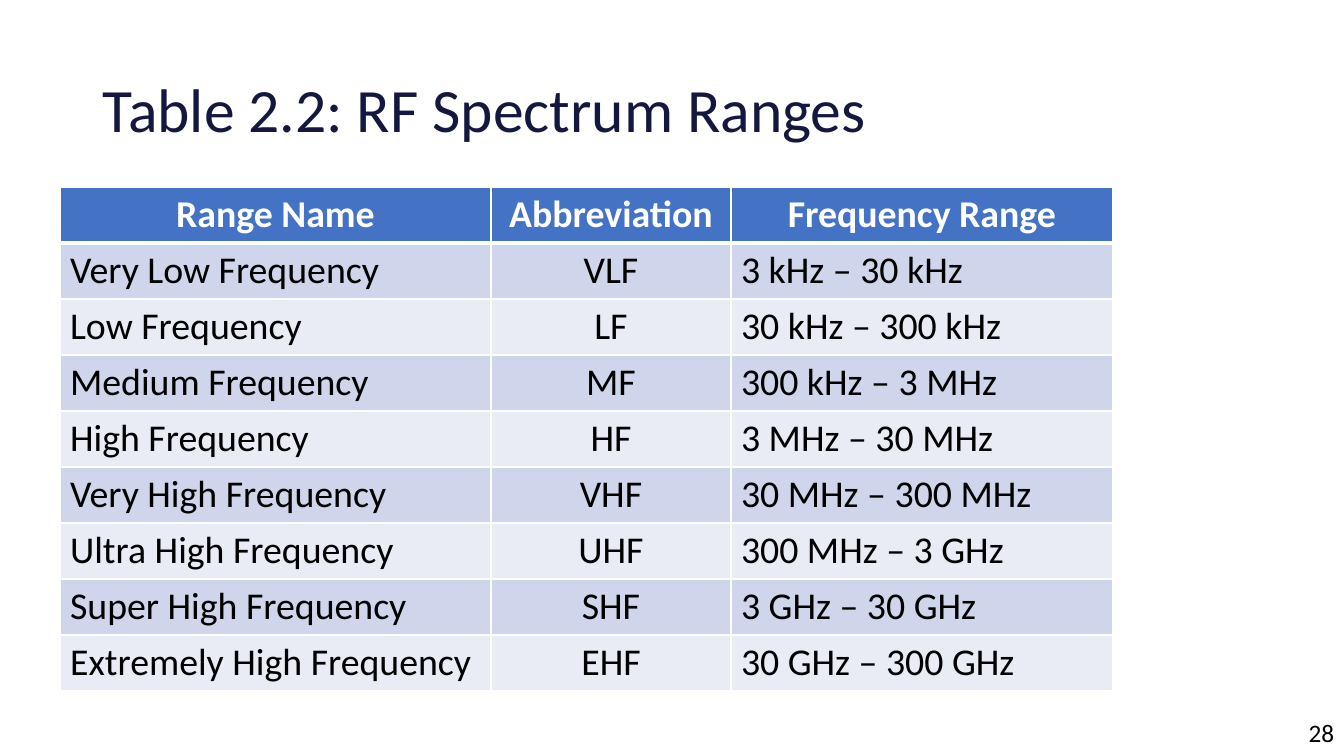
"""Build the RF spectrum ranges table slide."""
from lxml import etree
from pptx import Presentation
from pptx.dml.color import RGBColor
from pptx.enum.text import MSO_ANCHOR, MSO_AUTO_SIZE, PP_ALIGN
from pptx.oxml.ns import qn
from pptx.util import Emu, Pt

LEFT, CENTER, RIGHT = PP_ALIGN.LEFT, PP_ALIGN.CENTER, PP_ALIGN.RIGHT
TOP, MIDDLE = MSO_ANCHOR.TOP, MSO_ANCHOR.MIDDLE
GROW = MSO_AUTO_SIZE.SHAPE_TO_FIT_TEXT
FIXED = MSO_AUTO_SIZE.NONE

EMU_PER_PX = 914400 / 100.8
FONT = "Calibri"
COLORS = {
    "title": "14183F",
    "text": "000000",
    "white": "FFFFFF",
    "header": "4472C4",
    "odd": "CFD5EA",
    "even": "E9EBF5",
}
COL_WIDTHS = [431, 240, 382]
ROW_HEIGHT = 56
ROWS = [
    ("Range Name", "Abbreviation", "Frequency Range"),
    ("Very Low Frequency", "VLF", "3 kHz – 30 kHz"),
    ("Low Frequency", "LF", "30 kHz – 300 kHz"),
    ("Medium Frequency", "MF", "300 kHz – 3 MHz"),
    ("High Frequency", "HF", "3 MHz – 30 MHz"),
    ("Very High Frequency", "VHF", "30 MHz – 300 MHz"),
    ("Ultra High Frequency", "UHF", "300 MHz – 3 GHz"),
    ("Super High Frequency", "SHF", "3 GHz – 30 GHz"),
    ("Extremely High Frequency", "EHF", "30 GHz – 300 GHz"),
]


def px(n):
    """Convert pixels to EMU."""
    return Emu(round(n * EMU_PER_PX))


def rgb(name):
    """Look up a named colour."""
    return RGBColor.from_string(COLORS[name])


def add_run(p, text, size, color, align=LEFT, bold=False):
    """Add a styled run to an aligned paragraph."""
    p.alignment = align
    r = p.add_run()
    r.text = text
    r.font.name = FONT
    r.font.size = Pt(size)
    r.font.bold = bold
    r.font.color.rgb = rgb(color)


def add_text(s, box, text, size, color, align=LEFT, anchor=TOP,
             spacing=1.0, auto_size=FIXED):
    """Add a one-paragraph text box."""
    tf = s.shapes.add_textbox(*map(px, box)).text_frame
    tf.word_wrap = True
    tf.auto_size = auto_size
    tf.vertical_anchor = anchor
    p = tf.paragraphs[0]
    p.line_spacing = spacing
    add_run(p, text, size, color, align)


def add_border(cell, side, width):
    """Add a white border to one side of a cell."""
    tc_pr = cell._tc.get_or_add_tcPr()
    ln = etree.SubElement(tc_pr, qn(f"a:ln{side}"), w=str(Pt(width)))
    fill = etree.SubElement(ln, qn("a:solidFill"))
    etree.SubElement(fill, qn("a:srgbClr"), val=COLORS["white"])


def style_cell(cell, row, col, text):
    """Write and style a cell according to its row and column."""
    header = row == 0
    widths = {"L": 1, "R": 1, "T": 3 if row == 1 else 1, "B": 3 if header else 1}
    for side, width in widths.items():
        add_border(cell, side, width)
    cell.fill.solid()
    cell.fill.fore_color.rgb = rgb("header" if header else "odd" if row % 2 else "even")
    cell.vertical_anchor = MIDDLE
    add_run(cell.text_frame.paragraphs[0], text, 27,
            "white" if header else "text",
            CENTER if header or col == 1 else LEFT, header)


def add_grid(s, left, top):
    """Add the spectrum table."""
    box = (left, top, sum(COL_WIDTHS), ROW_HEIGHT * len(ROWS))
    table = s.shapes.add_table(len(ROWS), len(COL_WIDTHS), *map(px, box)).table
    for column, width in zip(table.columns, COL_WIDTHS):
        column.width = px(width)
    for row, texts in enumerate(ROWS):
        table.rows[row].height = px(ROW_HEIGHT)
        for col, text in enumerate(texts):
            style_cell(table.cell(row, col), row, col, text)


def main():
    """Build and save the slide."""
    prs = Presentation()
    prs.slide_width, prs.slide_height = px(1344), px(756)
    s = prs.slides.add_slide(prs.slide_layouts[6])
    add_text(s, (1276, 712, 68, 40), "28", 18, "text", RIGHT, auto_size=GROW)
    add_text(s, (93, 40, 1159, 146), "Table 2.2: RF Spectrum Ranges", 44, "title",
             anchor=MIDDLE, spacing=0.9)
    add_grid(s, 60, 187)
    prs.save("out.pptx")


if __name__ == "__main__":
    main()
